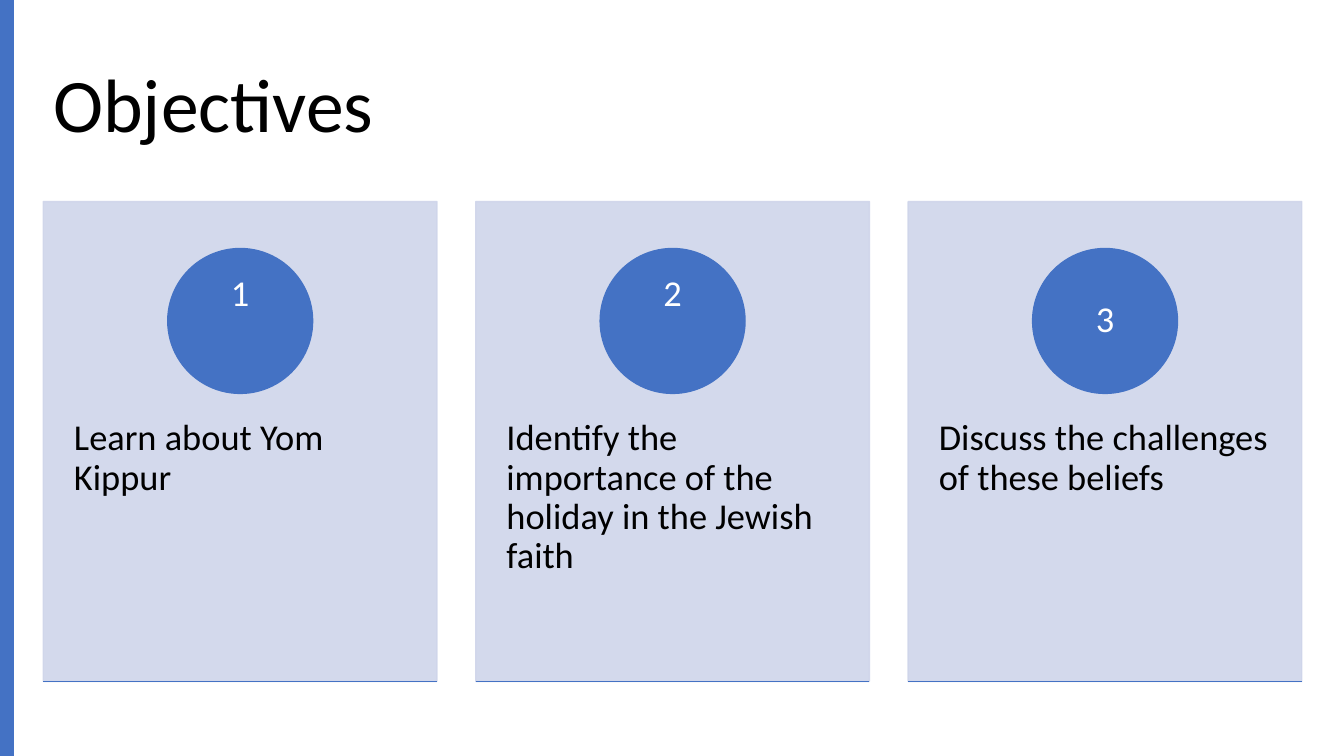
from dataclasses import dataclass

from lxml.etree import SubElement
from pptx import Presentation
from pptx.dml.color import RGBColor
from pptx.enum.shapes import MSO_CONNECTOR, MSO_SHAPE
from pptx.enum.text import MSO_ANCHOR, PP_ALIGN
from pptx.oxml.ns import qn
from pptx.shapes.autoshape import Shape
from pptx.slide import Slide
from pptx.util import Pt


@dataclass(frozen=True)
class Theme:
    font: str = "Calibri"
    accent: RGBColor = RGBColor(0x44, 0x72, 0xC4)
    card: RGBColor = RGBColor(0xCF, 0xD5, 0xEA)
    dark: RGBColor = RGBColor(0, 0, 0)
    light: RGBColor = RGBColor(0xFF, 0xFF, 0xFF)
    title_size: float = 54
    body_size: float = 26
    line_width: float = 1
    card_opacity: int = 90


@dataclass(frozen=True)
class Area:
    left: float
    top: float
    width: float
    height: float

    def lengths(self) -> tuple[Pt, Pt, Pt, Pt]:
        return Pt(self.left), Pt(self.top), Pt(self.width), Pt(self.height)


@dataclass(frozen=True)
class Insets:
    left: float = 7.2
    top: float = 3.6
    right: float = 7.2
    bottom: float = 3.6


@dataclass(frozen=True)
class Objective:
    number: str
    wording: str
    number_lift: float = 0


THEME = Theme()
PAGE_WIDTH, PAGE_HEIGHT = 960, 540
MARGIN = 30.96
CARD_TOP, CARD_WIDTH, CARD_HEIGHT, CARD_PITCH = 144, 281.2, 342.72, 308.88
CIRCLE_TOP, CIRCLE_SIZE = 177.5, 103.5
NUMBER_SIZE = 73
WORDING_TOP, WORDING_HEIGHT = 273.6, 205.92

OBJECTIVES = (
    Objective("1", "Learn about Yom Kippur", number_lift=19),
    Objective("2", "Identify the importance of the holiday in the Jewish faith", number_lift=19),
    Objective("3", "Discuss the challenges of these beliefs"),
)


def set_opacity(shape: Shape, percent: int) -> None:
    for color in shape._element.spPr.iter(qn("a:srgbClr")):
        SubElement(color, qn("a:alpha"), val=str(percent * 1000))


def add_block(page: Slide, kind: MSO_SHAPE, area: Area, color: RGBColor,
              outlined: bool = True) -> Shape:
    block = page.shapes.add_shape(kind, *area.lengths())
    block.shadow.inherit = False
    block.fill.solid()
    block.fill.fore_color.rgb = color
    if outlined:
        block.line.color.rgb = color
        block.line.width = Pt(THEME.line_width)
    else:
        block.line.fill.background()
    return block


def add_text(page: Slide, area: Area, wording: str, size: float, color: RGBColor,
             insets: Insets = Insets(), anchor: MSO_ANCHOR = MSO_ANCHOR.TOP,
             alignment: PP_ALIGN = PP_ALIGN.LEFT) -> None:
    frame = page.shapes.add_textbox(*area.lengths()).text_frame
    frame_format = {
        "word_wrap": True,
        "vertical_anchor": anchor,
        "margin_left": Pt(insets.left),
        "margin_top": Pt(insets.top),
        "margin_right": Pt(insets.right),
        "margin_bottom": Pt(insets.bottom),
    }
    for name, value in frame_format.items():
        setattr(frame, name, value)
    para = frame.paragraphs[0]
    para.alignment = alignment
    para.line_spacing = 0.9
    span = para.add_run()
    span.text = wording
    for name, value in {"name": THEME.font, "size": Pt(size)}.items():
        setattr(span.font, name, value)
    span.font.color.rgb = color


def add_rule(page: Slide, left: float, top: float, width: float) -> None:
    rule = page.shapes.add_connector(
        MSO_CONNECTOR.STRAIGHT, Pt(left), Pt(top), Pt(left + width), Pt(top))
    rule.line.color.rgb = THEME.accent
    rule.line.width = Pt(THEME.line_width)
    SubElement(rule._element.spPr, qn("a:effectLst"))


def add_objective(page: Slide, objective: Objective, left: float) -> None:
    card = add_block(page, MSO_SHAPE.RECTANGLE,
                     Area(left, CARD_TOP, CARD_WIDTH, CARD_HEIGHT), THEME.card)
    set_opacity(card, THEME.card_opacity)
    add_text(page, Area(left, WORDING_TOP, CARD_WIDTH, WORDING_HEIGHT), objective.wording,
             THEME.body_size, THEME.dark, Insets(21.9, 26, 21.9, 26))

    circle_left = left + (CARD_WIDTH - CIRCLE_SIZE) / 2
    add_block(page, MSO_SHAPE.OVAL,
              Area(circle_left, CIRCLE_TOP, CIRCLE_SIZE, CIRCLE_SIZE), THEME.accent)
    inner = (CIRCLE_SIZE - NUMBER_SIZE) / 2
    add_text(page, Area(circle_left + inner, CIRCLE_TOP + inner, NUMBER_SIZE, NUMBER_SIZE),
             objective.number, THEME.body_size, THEME.light,
             Insets(8, 1, 8, 1 + 2 * objective.number_lift),
             MSO_ANCHOR.MIDDLE, PP_ALIGN.CENTER)
    add_rule(page, left, CARD_TOP + CARD_HEIGHT, CARD_WIDTH)


def main() -> None:
    deck = Presentation()
    deck.slide_width, deck.slide_height = Pt(PAGE_WIDTH), Pt(PAGE_HEIGHT)
    page = deck.slides.add_slide(deck.slide_layouts[6])
    add_text(page, Area(MARGIN, 25.2, 898.6, 104.4), "Objectives",
             THEME.title_size, THEME.dark, anchor=MSO_ANCHOR.MIDDLE)
    add_block(page, MSO_SHAPE.RECTANGLE, Area(0, 0, 10, PAGE_HEIGHT), THEME.accent,
              outlined=False)
    for index, objective in enumerate(OBJECTIVES):
        add_objective(page, objective, MARGIN + index * CARD_PITCH)
    deck.save("out.pptx")


if __name__ == "__main__":
    main()
